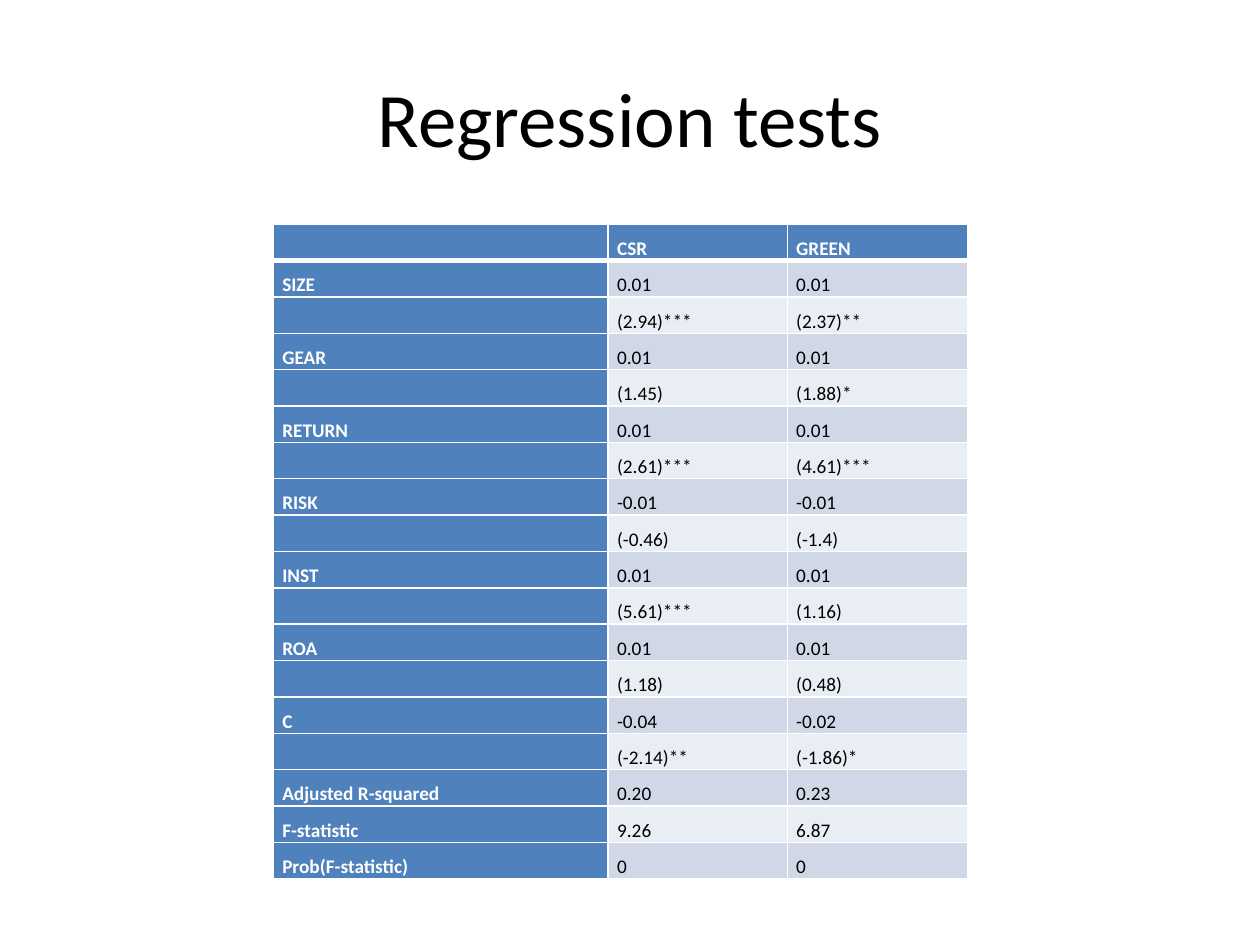
import pptx
import pptx.dml.color
import pptx.enum.text
import pptx.oxml
import pptx.oxml.ns
import pptx.util

Cm = pptx.util.Cm
Pt = pptx.util.Pt
RGBColor = pptx.dml.color.RGBColor
Align = pptx.enum.text.PP_ALIGN
Anchor = pptx.enum.text.MSO_ANCHOR

BLUE = RGBColor(0x4F, 0x81, 0xBD)
DARK_BAND = RGBColor(0xD0, 0xD8, 0xE8)
LIGHT_BAND = RGBColor(0xE9, 0xED, 0xF4)
WHITE = RGBColor(0xFF, 0xFF, 0xFF)
BLACK = RGBColor(0, 0, 0)
FONT = "Calibri"

TITLE = "Regression tests"
HEADER = ("", "CSR", "GREEN")
COEFFICIENTS = [
    ("SIZE", ("0.01", "0.01"), ("(2.94)***", "(2.37)**")),
    ("GEAR", ("0.01", "0.01"), ("(1.45)", "(1.88)*")),
    ("RETURN", ("0.01", "0.01"), ("(2.61)***", "(4.61)***")),
    ("RISK", ("-0.01", "-0.01"), ("(-0.46)", "(-1.4)")),
    ("INST", ("0.01", "0.01"), ("(5.61)***", "(1.16)")),
    ("ROA", ("0.01", "0.01"), ("(1.18)", "(0.48)")),
    ("C", ("-0.04", "-0.02"), ("(-2.14)**", "(-1.86)*")),
]
FIT_STATISTICS = [
    ("Adjusted R-squared", "0.20", "0.23"),
    ("F-statistic", "9.26", "6.87"),
    ("Prob(F-statistic)", "0", "0"),
]
COLUMN_WIDTHS = (Cm(6.75), Cm(3.61), Cm(3.63))
TABLE_HEIGHT = Cm(13.2)


def style_font(font, size, color, bold=False):
    font.name = FONT
    font.size = Pt(size)
    font.bold = bold
    font.color.rgb = color


def add_border(cell, side, points):
    cell.get_or_add_tcPr() if hasattr(cell, "get_or_add_tcPr") else None
    line = pptx.oxml.parse_xml(
        f'<a:ln{side} {pptx.oxml.ns.nsdecls("a")} w="{Pt(points)}">'
        f'<a:solidFill><a:srgbClr val="{WHITE}"/></a:solidFill></a:ln{side}>'
    )
    cell._tc.get_or_add_tcPr().append(line)


def add_title(page):
    box = page.shapes.add_textbox(Cm(1.27), Cm(0.76), Cm(22.86), Cm(3.18))
    frame = box.text_frame
    frame.word_wrap = True
    frame.vertical_anchor = Anchor.MIDDLE
    para = frame.paragraphs[0]
    para.text = TITLE
    para.alignment = Align.CENTER
    style_font(para.font, 44, BLACK)


def fill_cell(cell, text, row, column):
    is_header = row == 0
    is_label = is_header or column == 0
    for side in "LRTB":
        thick = (row, side) in ((0, "B"), (1, "T"))
        add_border(cell, side, 3 if thick else 1)
    cell.fill.solid()
    band = DARK_BAND if row % 2 else LIGHT_BAND
    cell.fill.fore_color.rgb = BLUE if is_label else band
    cell.margin_left = cell.margin_right = Cm(0.18)
    cell.margin_top = cell.margin_bottom = 0
    cell.vertical_anchor = Anchor.BOTTOM
    para = cell.text_frame.paragraphs[0]
    para.text = text
    para.alignment = Align.JUSTIFY
    para.line_spacing = 1.15
    para.space_after = Pt(10 if is_header else 0)
    style_font(para.font, 11, WHITE if is_label else BLACK, is_label)


def add_results(page):
    rows = [HEADER]
    for label, estimates, t_values in COEFFICIENTS:
        rows += [(label, *estimates), ("", *t_values)]
    rows += FIT_STATISTICS
    frame = page.shapes.add_table(
        len(rows), len(HEADER), Cm(5.51), Cm(4.52), sum(COLUMN_WIDTHS), TABLE_HEIGHT
    )
    table = frame.table
    for column, width in zip(table.columns, COLUMN_WIDTHS):
        column.width = width
    for row, texts in enumerate(rows):
        table.rows[row].height = TABLE_HEIGHT // len(rows)
        for column, text in enumerate(texts):
            fill_cell(table.cell(row, column), text, row, column)


def main():
    deck = pptx.Presentation()
    deck.slide_width = Cm(25.4)
    deck.slide_height = Cm(19.05)
    page = deck.slides.add_slide(deck.slide_layouts[6])
    add_title(page)
    add_results(page)
    deck.save("out.pptx")


if __name__ == "__main__":
    main()
